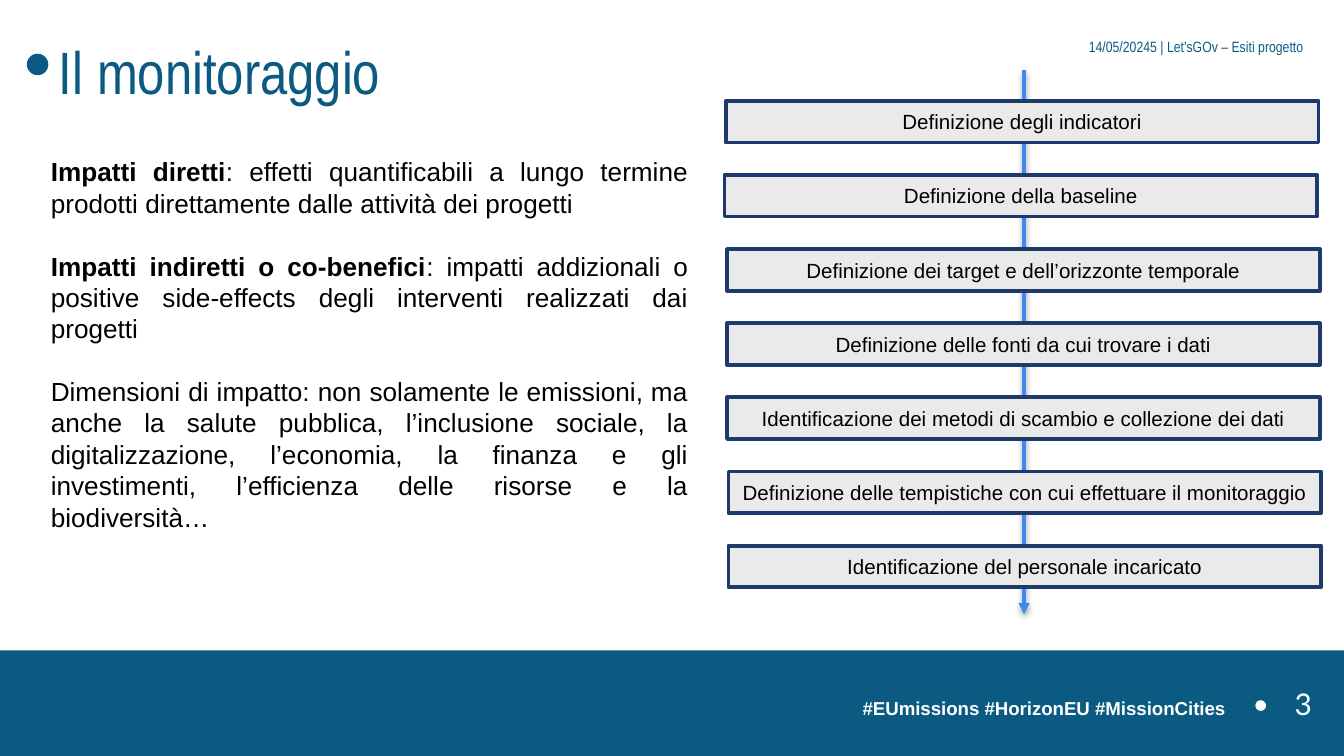
from lxml.etree import SubElement
from pptx import Presentation
from pptx.dml.color import RGBColor
from pptx.enum.shapes import MSO_CONNECTOR, MSO_SHAPE
from pptx.enum.text import MSO_ANCHOR, PP_ALIGN
from pptx.oxml.ns import qn
from pptx.util import Inches, Pt

TEAL = RGBColor(0x0A, 0x5A, 0x82)
NAVY = RGBColor(0x1D, 0x3A, 0x6B)
BLUE = RGBColor(0x42, 0x85, 0xF4)
GREY = RGBColor(0xEA, 0xEA, 0xEA)
WHITE = RGBColor(0xFF, 0xFF, 0xFF)
BLACK = RGBColor(0, 0, 0)

FIRST_STEP_TOP = 0.75
LAST_STEP_TOP = 4.06
STEPS = (
    (5.4, "Definizione degli indicatori"),
    (5.39, "Definizione della baseline"),
    (5.41, "Definizione dei target e dell’orizzonte temporale"),
    (5.41, "Definizione delle fonti da cui trovare i dati"),
    (5.41, "Identificazione dei metodi di scambio e collezione dei dati"),
    (5.42, "Definizione delle tempistiche con cui effettuare il monitoraggio"),
    (5.42, "Identificazione del personale incaricato"),
)
IMPACTS = (
    ("Impatti diretti", ": effetti quantificabili a lungo termine prodotti "
     "direttamente dalle attività dei progetti"),
    ("Impatti indiretti o co-benefici", ": impatti addizionali o positive "
     "side-effects degli interventi realizzati dai progetti"),
    ("", "Dimensioni di impatto: non solamente le emissioni, ma anche la salute "
     "pubblica, l’inclusione sociale, la digitalizzazione, l’economia, la finanza "
     "e gli investimenti, l’efficienza delle risorse e la biodiversità…"),
)


def apply(target, values):
    for name, value in values.items():
        setattr(target, name, value)


class SlideBuilder:
    body_font = "Arial"
    heading_font = "Arial Narrow"
    number_font = "Lato"

    def __init__(self, slide):
        self.slide = slide

    def add_run(self, paragraph, text, size, color, name=None, bold=False):
        run = paragraph.add_run()
        run.text = text
        apply(run.font, {"size": Pt(size), "name": name or self.body_font, "bold": bold})
        run.font.color.rgb = color

    def text_box(self, box, inset=0.1, anchor=MSO_ANCHOR.TOP):
        frame = self.slide.shapes.add_textbox(*map(Inches, box)).text_frame
        apply(frame, {
            "word_wrap": True,
            "vertical_anchor": anchor,
            "margin_left": Inches(0.1),
            "margin_right": Inches(0.1),
            "margin_top": Inches(inset),
            "margin_bottom": Inches(inset),
        })
        return frame

    def label(self, box, text, size, color, name=None, bold=False,
              anchor=MSO_ANCHOR.TOP, **paragraph_format):
        paragraph = self.text_box(box, anchor=anchor).paragraphs[0]
        apply(paragraph, paragraph_format)
        self.add_run(paragraph, text, size, color, name, bold)

    def body(self, box, entries):
        frame = self.text_box(box, inset=0.05)
        for index, (lead, text) in enumerate(entries):
            paragraph = frame.add_paragraph() if index else frame.paragraphs[0]
            paragraph.alignment = PP_ALIGN.JUSTIFY
            if index:
                paragraph.space_before = Pt(16.8)
            if lead:
                self.add_run(paragraph, lead, 14, BLACK, bold=True)
            self.add_run(paragraph, text, 14, BLACK)

    def shape(self, kind, box, fill):
        shape = self.slide.shapes.add_shape(kind, *map(Inches, box))
        shape.shadow.inherit = False
        shape.fill.solid()
        shape.fill.fore_color.rgb = fill
        shape.line.fill.background()
        return shape

    def step(self, box, text):
        shape = self.shape(MSO_SHAPE.RECTANGLE, box, GREY)
        shape.line.color.rgb = NAVY
        shape.line.width = Pt(2)
        apply(shape.text_frame, {"word_wrap": True, "vertical_anchor": MSO_ANCHOR.MIDDLE})
        paragraph = shape.text_frame.paragraphs[0]
        paragraph.alignment = PP_ALIGN.CENTER
        self.add_run(paragraph, text, 11, BLACK)

    def arrow(self, start, end):
        connector = self.slide.shapes.add_connector(
            MSO_CONNECTOR.STRAIGHT, *map(Inches, start + end))
        connector.line.color.rgb = BLUE
        connector.line.width = Pt(2)
        properties = connector._element.spPr
        SubElement(properties.find(qn("a:ln")), qn("a:tailEnd"), type="triangle")
        effects = SubElement(properties, qn("a:effectLst"))
        shadow = SubElement(effects, qn("a:outerShdw"), blurRad=str(Pt(3.1)),
                            dist=str(Pt(1.6)), dir="5400000", rotWithShape="0")
        color = SubElement(shadow, qn("a:srgbClr"), val=str(BLACK))
        SubElement(color, qn("a:alpha"), val="38000")


def main():
    presentation = Presentation()
    presentation.slide_width = Inches(10)
    presentation.slide_height = Inches(10) * 9 // 16
    slide = presentation.slides.add_slide(presentation.slide_layouts[6])
    builder = SlideBuilder(slide)

    builder.shape(MSO_SHAPE.OVAL, (0.2, 0.4, 0.16, 0.16), TEAL)
    builder.shape(MSO_SHAPE.RECTANGLE, (0, 4.84, 10, 0.79), TEAL)
    builder.label((9.26, 5.02, 0.6, 0.43), "3", 16, WHITE, builder.number_font,
                  anchor=MSO_ANCHOR.MIDDLE, alignment=PP_ALIGN.RIGHT)
    builder.label((6.32, 5.07, 2.94, 0.32), "#EUmissions #HorizonEU #MissionCities",
                  10, WHITE, bold=True, line_spacing=1.13)
    builder.shape(MSO_SHAPE.OVAL, (9.34, 5.21, 0.08, 0.08), WHITE)

    builder.label((0.34, 0.16, 9.32, 0.63), "Il monitoraggio", 32, TEAL,
                  builder.heading_font)
    builder.label((6.3, 0.18, 3.5, 0.36), "14/05/20245 | Let’sGOv – Esiti progetto",
                  8, TEAL, builder.heading_font,
                  alignment=PP_ALIGN.RIGHT, line_spacing=1.15)
    builder.body((0.28, 1.11, 4.94, 2.69), IMPACTS)

    builder.arrow((7.62, 0.52), (7.62, 4.57))
    pitch = (LAST_STEP_TOP - FIRST_STEP_TOP) / (len(STEPS) - 1)
    for index, (left, text) in enumerate(STEPS):
        builder.step((left, FIRST_STEP_TOP + pitch * index, 4.41, 0.31), text)

    presentation.save("out.pptx")


if __name__ == "__main__":
    main()
